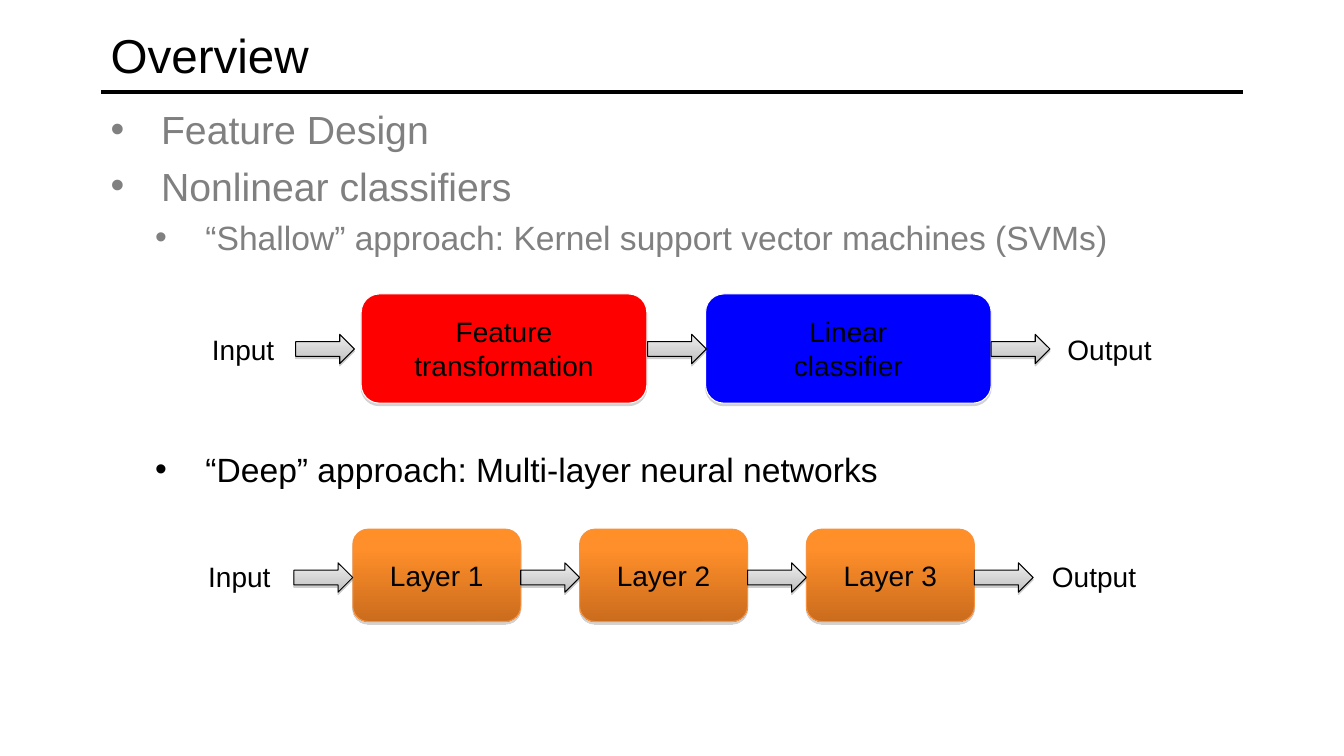
from lxml import etree
from pptx import Presentation
from pptx.dml.color import RGBColor
from pptx.enum.shapes import MSO_CONNECTOR, MSO_SHAPE
from pptx.enum.text import MSO_ANCHOR, PP_ALIGN
from pptx.oxml.ns import qn
from pptx.util import Inches, Pt

ROUNDED, ARROW = MSO_SHAPE.ROUNDED_RECTANGLE, MSO_SHAPE.RIGHT_ARROW
STRAIGHT = MSO_CONNECTOR.STRAIGHT
TOP, MIDDLE = MSO_ANCHOR.TOP, MSO_ANCHOR.MIDDLE
LEFT, CENTER = PP_ALIGN.LEFT, PP_ALIGN.CENTER

BLACK = RGBColor(0x00, 0x00, 0x00)
WHITE = RGBColor(0xFF, 0xFF, 0xFF)
GRAY = RGBColor(0x80, 0x80, 0x80)
RED = RGBColor(0xFF, 0x00, 0x00)
BLUE = RGBColor(0x00, 0x00, 0xFF)
ORANGE_EDGE = RGBColor(0xF6, 0x92, 0x40)
ORANGE_STOPS = [(0, RGBColor(0xFF, 0x8F, 0x26)), (20, RGBColor(0xFF, 0x8F, 0x2A)),
                (100, RGBColor(0xCB, 0x6C, 0x1D))]
SILVER_STOPS = [(0, RGBColor(0xED, 0xED, 0xED)), (65, RGBColor(0xD0, 0xD0, 0xD0)),
                (100, RGBColor(0xBC, 0xBC, 0xBC))]

FONT = "Arial"
LABEL_SIZE = 20
BULLET_SIZES = [28, 24]
BULLET_INDENTS = [0.5, 0.94]
COLUMNS, ROWS = 160, 90
CELL = Inches(1 / 12)


def grid(*cells):
    return [round(cell * CELL) for cell in cells]


def style_font(paragraph, size, color):
    paragraph.font.name = FONT
    paragraph.font.size = Pt(size)
    paragraph.font.color.rgb = color


def write_text(shape, text, size=LABEL_SIZE, align=CENTER, anchor=MIDDLE):
    frame = shape.text_frame
    frame.word_wrap = True
    frame.vertical_anchor = anchor
    frame.text = text
    frame.paragraphs[0].alignment = align
    style_font(frame.paragraphs[0], size, BLACK)


def add_label(slide, text, box, **style):
    write_text(slide.shapes.add_textbox(*grid(*box)), text, **style)


def add_color(parent, color):
    return etree.SubElement(parent, qn("a:srgbClr"), val=str(color))


def fill_gradient(shape, stops):
    """Fill from top to bottom with (percent, colour) stops."""
    shape.fill.gradient()
    shape.fill.gradient_angle = 270
    stop_list = shape._element.spPr.find(qn("a:gradFill")).find(qn("a:gsLst"))
    for stop in list(stop_list):
        stop_list.remove(stop)
    for percent, color in stops:
        add_color(etree.SubElement(stop_list, qn("a:gs"), pos=str(percent * 1000)), color)


def add_shadow(shape, opacity, distance):
    shape.shadow.inherit = False
    effects = shape._element.spPr.find(qn("a:effectLst"))
    shadow = etree.SubElement(effects, qn("a:outerShdw"), blurRad="0",
                              dist=str(Pt(distance)), dir="5400000", rotWithShape="0")
    etree.SubElement(add_color(shadow, GRAY), qn("a:alpha"), val=str(opacity * 1000))


def add_block(slide, text, box, fill, edge):
    block = slide.shapes.add_shape(ROUNDED, *grid(*box))
    if isinstance(fill, list):
        fill_gradient(block, fill)
    else:
        block.fill.solid()
        block.fill.fore_color.rgb = fill
    block.line.color.rgb = edge
    block.line.width = Pt(0.75)
    add_shadow(block, 35, 1.8)
    write_text(block, text)


def add_arrow(slide, column, row):
    arrow = slide.shapes.add_shape(ARROW, *grid(column, row, 7, 3.5))
    fill_gradient(arrow, SILVER_STOPS)
    arrow.line.color.rgb = BLACK
    arrow.line.width = Pt(0.75)
    add_shadow(arrow, 38, 1.6)


def add_bullets(slide, box, items, color):
    """Add a bulleted list of (level, text) items."""
    frame = slide.shapes.add_textbox(*grid(*box)).text_frame
    frame.word_wrap = True
    for index, (level, text) in enumerate(items):
        paragraph = frame.add_paragraph() if index else frame.paragraphs[0]
        paragraph.text = text
        paragraph.level = level
        size = BULLET_SIZES[level]
        if index:
            paragraph.space_before = Pt(0.23 * size)
        properties = paragraph._p.get_or_add_pPr()
        properties.set("marL", str(Inches(BULLET_INDENTS[level])))
        properties.set("indent", str(Inches(-0.5)))
        etree.SubElement(properties, qn("a:buFont"), typeface=FONT)
        etree.SubElement(properties, qn("a:buChar"), char="•")
        style_font(paragraph, size, color)


def add_title(slide, text):
    rule = slide.shapes.add_connector(STRAIGHT, *grid(12, 11, 148, 11))
    rule.line.color.rgb = BLACK
    rule.line.width = Pt(3)
    etree.SubElement(rule._element.spPr, qn("a:effectLst"))
    add_label(slide, text, (12, 1, 136, 11), size=34, align=LEFT)


def add_shallow_pipeline(slide):
    add_block(slide, "Feature transformation", (43, 35, 34, 13), RED, WHITE)
    add_block(slide, "Linear\vclassifier", (84, 35, 34, 13), BLUE, WHITE)
    add_label(slide, "Input", (19.6, 38.9, 18.7, 5.25))
    add_label(slide, "Output", (125.9, 39, 16, 5.25), align=LEFT, anchor=TOP)
    for column in (35.2, 77.1, 118):
        add_arrow(slide, column, 39.8)


def add_deep_pipeline(slide):
    first, width, pitch, layers = 42, 20, 27, 3
    for layer in range(layers):
        add_block(slide, f"Layer {layer + 1}", (first + layer * pitch, 63, width, 11),
                  ORANGE_STOPS, ORANGE_EDGE)
    for step in range(layers + 1):
        add_arrow(slide, first - 7 + step * pitch, 67)
    add_label(slide, "Input", (21, 66, 15, 5.25), anchor=TOP)
    add_label(slide, "Output", (124, 66, 12.5, 5.25), anchor=TOP)


def main():
    presentation = Presentation()
    presentation.slide_width, presentation.slide_height = grid(COLUMNS, ROWS)
    slide = presentation.slides.add_slide(presentation.slide_layouts[6])
    add_title(slide, "Overview")
    add_bullets(slide, (12, 12, 136, 20), [
        (0, "Feature Design"),
        (0, "Nonlinear classifiers"),
        (1, "“Shallow” approach: Kernel support vector machines (SVMs)"),
    ], GRAY)
    add_shallow_pipeline(slide)
    add_bullets(slide, (12, 52.8, 136, 6),
                [(1, "“Deep” approach: Multi-layer neural networks")], BLACK)
    add_deep_pipeline(slide)
    presentation.save("out.pptx")


if __name__ == "__main__":
    main()
